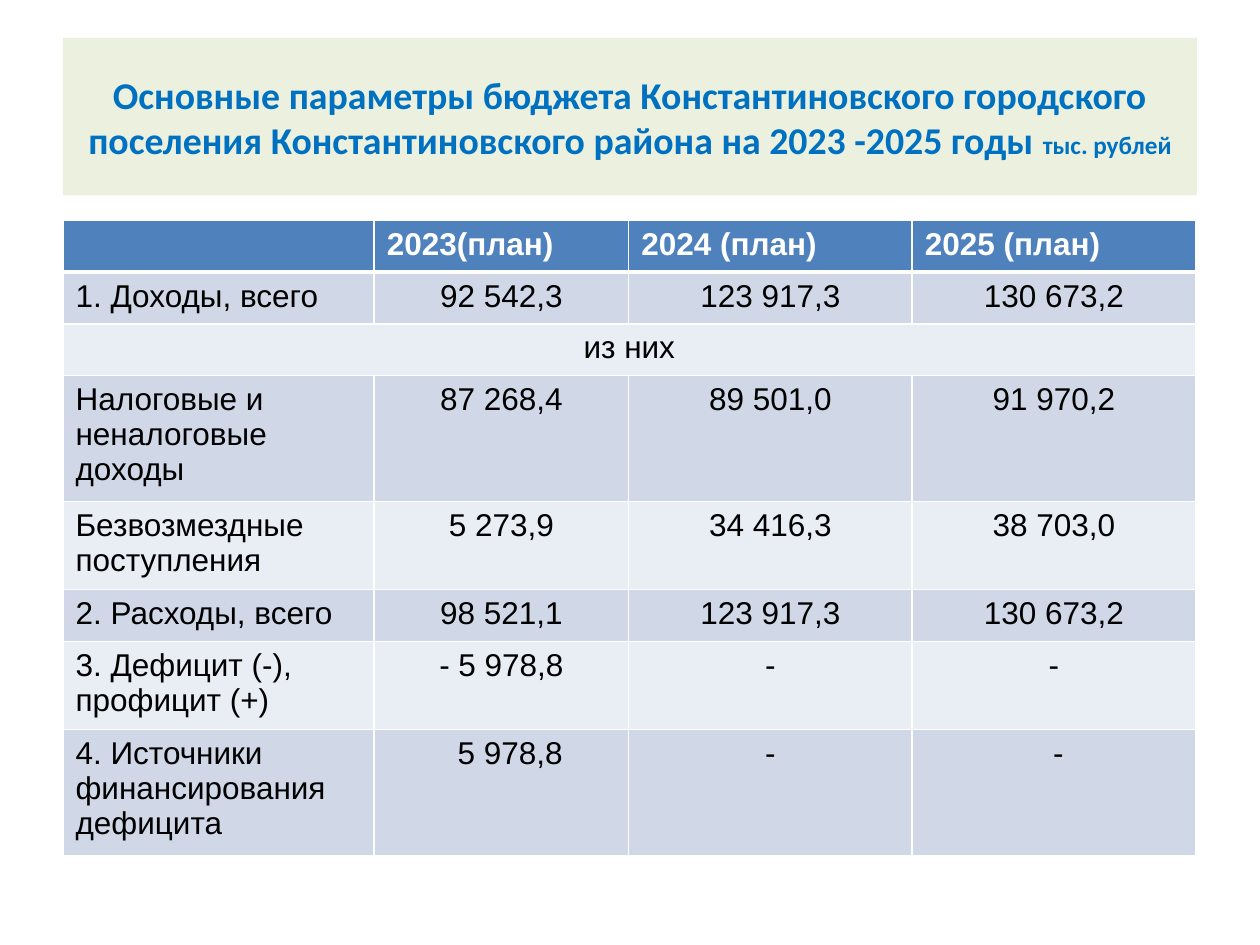
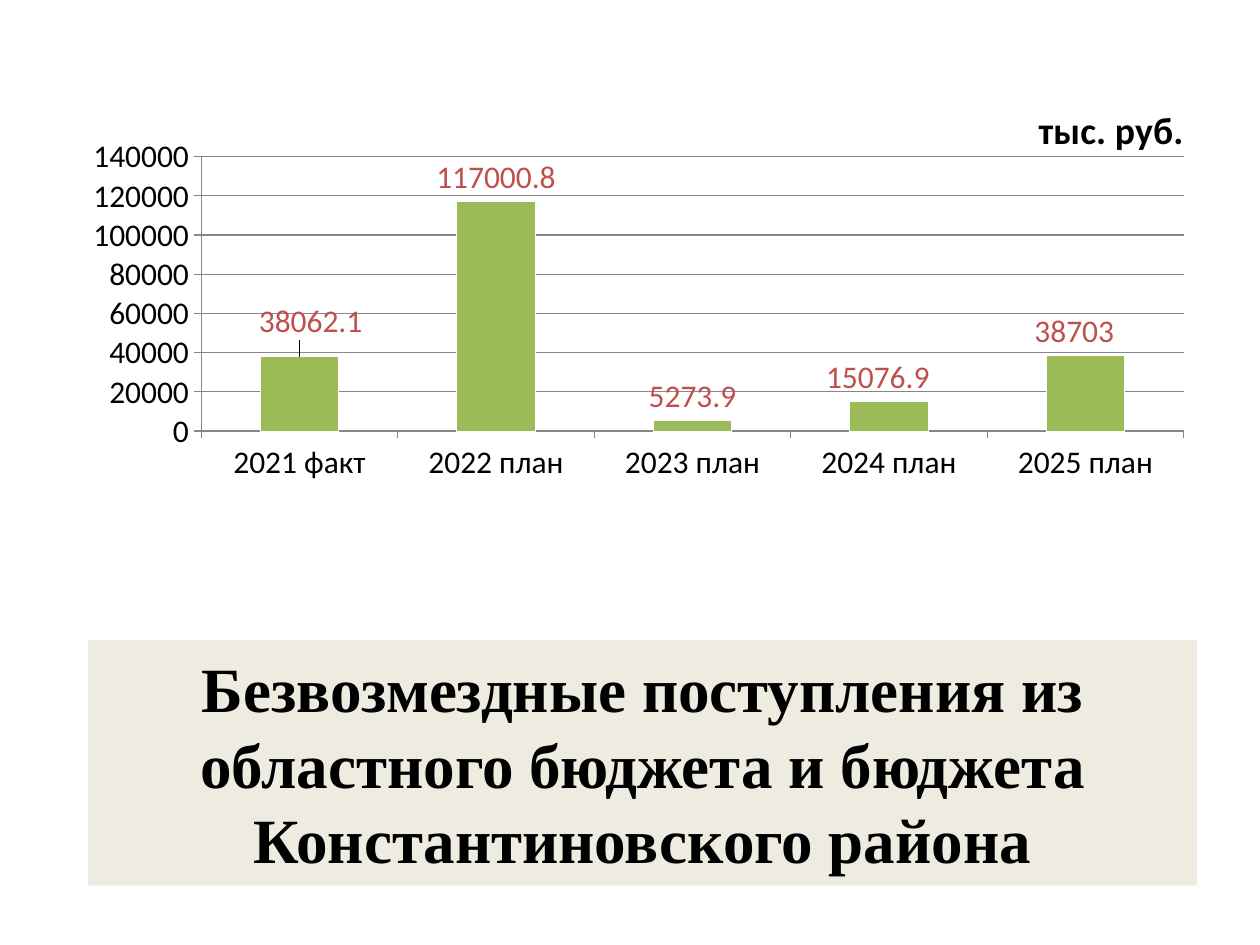
from dataclasses import dataclass

import pptx
import pptx.chart.data
import pptx.dml.color
import pptx.enum.chart
import pptx.enum.shapes
import pptx.enum.text
import pptx.oxml
import pptx.oxml.ns
import pptx.util
from pptx.util import Inches, Pt


def rgb(value):
    """Turn a hex string into a colour."""
    return pptx.dml.color.RGBColor.from_string(value)


@dataclass(frozen=True)
class Theme:
    """Colours, fonts and type sizes shared by the slides."""
    white: str = "FFFFFF"
    black: str = "000000"
    title_blue: str = "0070C0"
    title_green: str = "EBF1DE"
    title_beige: str = "EEECE1"
    header: str = "4F81BD"
    bands: tuple = ("D0D8E8", "E9EDF4")
    bar: str = "9BBB59"
    value: str = "C0504D"
    rule: str = "878787"
    sans: str = "Calibri"
    serif: str = "Times New Roman"
    table: str = "Arial"
    body_size: float = 18
    heading_size: float = 21.6
    unit_size: float = 14.4
    big_size: float = 36


THEME = Theme()
CENTER = pptx.enum.text.PP_ALIGN.CENTER

BUDGET = [
    ("", "2023(план)", "2024 (план)", "2025 (план)"),
    ("1. Доходы, всего", "92 542,3", "123 917,3", "130 673,2"),
    ("из них",),
    ("Налоговые и неналоговые доходы", "87 268,4", "89 501,0", "91 970,2"),
    ("Безвозмездные поступления", "5 273,9", "34 416,3", "38 703,0"),
    ("2. Расходы, всего", "98 521,1", "123 917,3", "130 673,2"),
    ("3. Дефицит (-), профицит (+)", "- 5 978,8", "-", "-"),
    ("4. Источники финансирования дефицита", "5 978,8", "-", "-"),
]
COLUMN_WIDTHS = (2.47, 2.02, 2.25, 2.25)
ROW_HEIGHTS = (0.41, 0.41, 0.41, 1, 0.7, 0.41, 0.7, 1)
CELL_INDENTS = {(7, 1): 0.14, (7, 3): 0.07}

TRANSFERS = {
    "2021 факт": 38062.1,
    "2022 план": 117000.8,
    "2023 план": 5273.9,
    "2024 план": 15076.9,
    "2025 план": 38703,
}
LABEL_SHIFTS = {0: (0.01, -0.02), 3: (-0.01, 0), 4: (-0.01, 0)}


def style_font(font, name, size, color, bold=False):
    """Set the face, size, colour and weight of a font."""
    font.name, font.size, font.bold = name, Pt(size), bold
    font.color.rgb = rgb(color)


def title_band(slide, box, fill, text, name, size, color, unit=""):
    """Draw a filled title band with an optional smaller unit."""
    band = slide.shapes.add_shape(
        pptx.enum.shapes.MSO_SHAPE.RECTANGLE, *map(Inches, box))
    band.shadow.inherit = False
    band.fill.solid()
    band.fill.fore_color.rgb = rgb(fill)
    band.line.fill.background()
    band.text_frame.word_wrap = True
    band.text_frame.vertical_anchor = pptx.enum.text.MSO_ANCHOR.MIDDLE
    heading = band.text_frame.paragraphs[0]
    heading.alignment = CENTER
    for part, part_size in ((text, size), (unit, THEME.unit_size)):
        if part:
            run = heading.add_run()
            run.text = part
            style_font(run.font, name, part_size, color, bold=True)


def cell_borders(cell, top, bottom):
    """Give a cell white borders with the given top and bottom widths."""
    properties = cell._tc.get_or_add_tcPr()
    for index, (side, width) in enumerate(
            (("L", 1), ("R", 1), ("T", top), ("B", bottom))):
        properties.insert(index, pptx.oxml.parse_xml(
            f'<a:ln{side} {pptx.oxml.ns.nsdecls("a")} w="{Pt(width)}"><a:solidFill>'
            f'<a:srgbClr val="{THEME.white}"/></a:solidFill></a:ln{side}>'))


def budget_table(slide, left, top):
    """Place the table of budget parameters."""
    table = slide.shapes.add_table(
        len(ROW_HEIGHTS), len(COLUMN_WIDTHS), Inches(left), Inches(top),
        Inches(sum(COLUMN_WIDTHS)), Inches(sum(ROW_HEIGHTS))).table
    for column, width in zip(table.columns, COLUMN_WIDTHS):
        column.width = Inches(width)
    for r, (values, height) in enumerate(zip(BUDGET, ROW_HEIGHTS)):
        table.rows[r].height = Inches(height)
        is_header, is_single = r == 0, len(values) == 1
        for c in range(len(COLUMN_WIDTHS)):
            cell = table.cell(r, c)
            cell.fill.solid()
            cell.fill.fore_color.rgb = rgb(
                THEME.header if is_header else THEME.bands[(r - 1) % 2])
            cell_borders(cell, 3 if r == 1 else 1, 3 if is_header else 1)
            cell.margin_left = Inches(0.1 + CELL_INDENTS.get((r, c), 0))
            entry = cell.text_frame.paragraphs[0]
            if c < len(values):
                entry.text = values[c]
            if is_single or (c and not is_header):
                entry.alignment = CENTER
            style_font(entry.font, THEME.table, THEME.body_size,
                       THEME.white if is_header else THEME.black, is_header)
        if is_single:
            table.cell(r, 0).merge(table.cell(r, len(COLUMN_WIDTHS) - 1))


def manual_layout(x, y, size=None):
    """Build a chart layout, with a size for an inner plot area."""
    fields = [("xMode", "edge"), ("yMode", "edge")] if size else []
    fields += [("x", x), ("y", y)]
    if size:
        fields = [("layoutTarget", "inner"), *fields, ("w", size[0]), ("h", size[1])]
    inner = "".join(f'<c:{tag} val="{value}"/>' for tag, value in fields)
    return pptx.oxml.parse_xml(
        f'<c:layout {pptx.oxml.ns.nsdecls("c")}><c:manualLayout>{inner}'
        '</c:manualLayout></c:layout>')


def chart_title(chart, text, x, y):
    """Put the unit title at a fixed place in the chart."""
    chart.has_title = True
    heading = chart.chart_title.text_frame.paragraphs[0]
    heading.text = text
    style_font(heading.font, THEME.sans, THEME.heading_size, THEME.black, True)
    title = chart.chart_title._element
    for old in title.findall(pptx.oxml.ns.qn("c:layout")):
        title.remove(old)
    layout = manual_layout(x, y)
    for tag in ("yMode", "xMode"):
        layout[0].insert(0, pptx.oxml.parse_xml(
            f'<c:{tag} {pptx.oxml.ns.nsdecls("c")} val="edge"/>'))
    title.find(pptx.oxml.ns.qn("c:tx")).addnext(layout)
    chart.chart_title.include_in_layout = False


def transfers_chart(slide, box):
    """Place the column chart of transfers by year."""
    data = pptx.chart.data.CategoryChartData()
    data.categories = list(TRANSFERS)
    data.add_series("Series 1", list(TRANSFERS.values()))
    chart = slide.shapes.add_chart(
        pptx.enum.chart.XL_CHART_TYPE.COLUMN_CLUSTERED,
        *map(Inches, box), data).chart
    style_font(chart.font, THEME.sans, THEME.body_size, THEME.black)
    chart.has_legend = False
    chart_title(chart, "тыс. руб.", 0.86, 0.06)

    plot_area = chart._chartSpace.chart.plotArea
    for old in plot_area.findall(pptx.oxml.ns.qn("c:layout")):
        plot_area.remove(old)
    plot_area.insert(0, manual_layout(0.116, 0.169, (0.88, 0.495)))

    years, amounts = chart.category_axis, chart.value_axis
    amounts.maximum_scale, amounts.minimum_scale = 140000, 0
    amounts.major_unit = 20000
    amounts.has_major_gridlines = True
    for line in (years.format.line, amounts.format.line,
                 amounts.major_gridlines.format.line):
        line.color.rgb = rgb(THEME.rule)
        line.width = Pt(0.75)
    for axis in (years, amounts):
        axis.major_tick_mark = pptx.enum.chart.XL_TICK_MARK.OUTSIDE

    plot = chart.plots[0]
    plot.gap_width = 150
    plot.vary_by_categories = False
    bars = plot.series[0]
    bars.format.fill.solid()
    bars.format.fill.fore_color.rgb = rgb(THEME.bar)
    bars.format.line.color.rgb = rgb(THEME.white)
    labels = bars.data_labels
    labels.show_value = True
    labels.position = pptx.enum.chart.XL_LABEL_POSITION.OUTSIDE_END
    style_font(labels.font, THEME.sans, THEME.body_size, THEME.value)
    for index, shift in LABEL_SHIFTS.items():
        label = bars.points[index].data_label
        style_font(label.font, THEME.sans, THEME.body_size, THEME.value)
        label.position = pptx.enum.chart.XL_LABEL_POSITION.OUTSIDE_END
        element = labels._element.find(
            f'{pptx.oxml.ns.qn("c:dLbl")}[{pptx.oxml.ns.qn("c:idx")}][last()]')
        element.find(pptx.oxml.ns.qn("c:idx")).addnext(manual_layout(*shift))


def budget_slide(slide):
    """Build the slide with the main budget parameters."""
    title_band(
        slide, (0.5, 0.3, 9, 1.25), THEME.title_green,
        "Основные параметры бюджета Константиновского городского поселения "
        "Константиновского района на 2023 -2025 годы ",
        THEME.sans, THEME.heading_size, THEME.title_blue, "тыс. рублей")
    budget_table(slide, 0.5, 1.75)


def transfers_slide(slide):
    """Build the slide with the transfers by year."""
    title_band(
        slide, (0.7, 5.08, 8.8, 1.95), THEME.title_beige,
        "Безвозмездные поступления из областного бюджета и бюджета "
        "Константиновского района",
        THEME.serif, THEME.big_size, THEME.black)
    transfers_chart(slide, (0.57, 0.5, 8.88, 4.4))


def main():
    """Build and save the presentation."""
    deck = pptx.Presentation()
    deck.slide_width, deck.slide_height = Inches(10), Inches(7.5)
    for build in (budget_slide, transfers_slide):
        build(deck.slides.add_slide(deck.slide_layouts[6]))
    deck.save("out.pptx")


if __name__ == "__main__":
    main()
